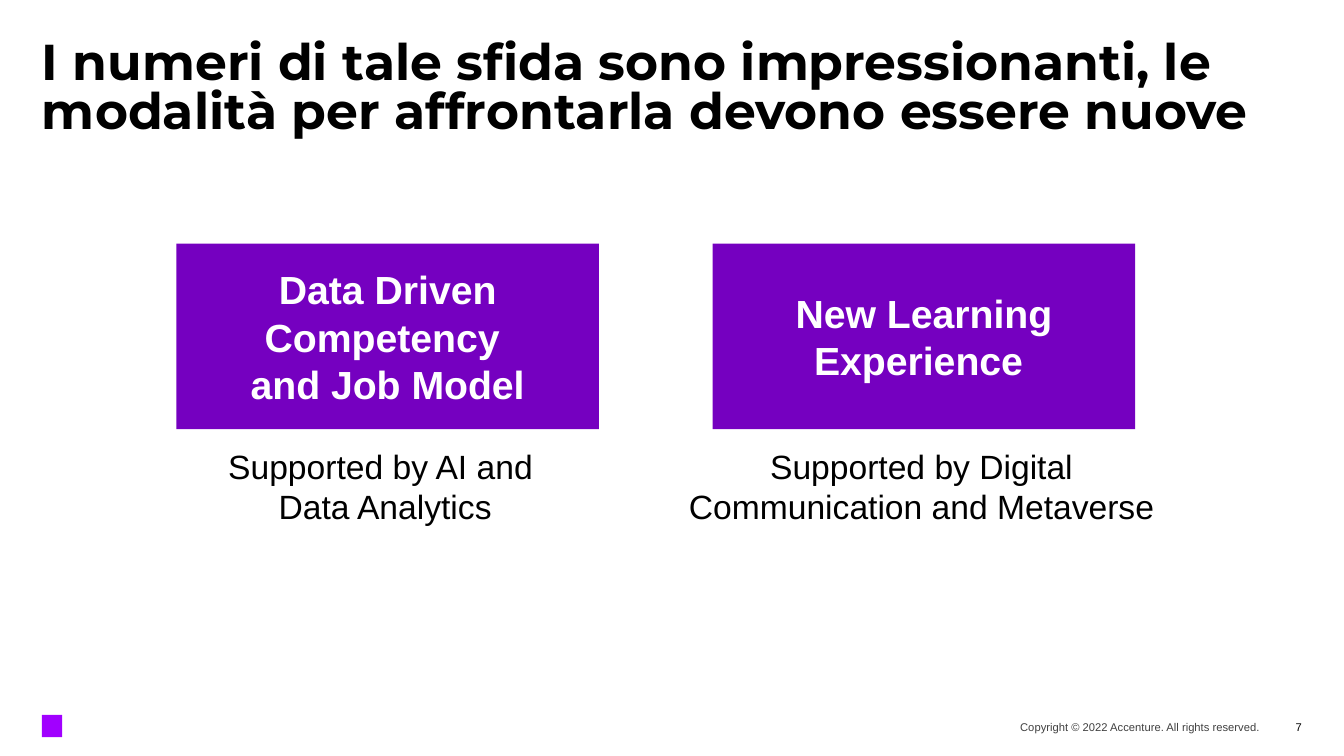
from pptx import Presentation
from pptx import util as u
from pptx.dml.color import RGBColor
from pptx.enum import shapes, text

BLACK = RGBColor(0x00, 0x00, 0x00)
GREY = RGBColor(0x40, 0x40, 0x40)
WHITE = RGBColor(0xFF, 0xFF, 0xFF)
PURPLE = RGBColor(0x75, 0x00, 0xC0)
VIOLET = RGBColor(0xA1, 0x00, 0xFF)

COLUMNS, ROWS = 32, 18
CARD_LEFT, CARD_STEP, CARD_WIDTH = 4.2, 12.77, 10.06
CAPTION_NUDGE = -0.06

TITLE = ("I numeri di tale sfida sono impressionanti, "
         "le modalità per affrontarla devono essere nuove")
# Heading, caption and caption width in columns; \v is a line break
PILLARS = [
    ("Data Driven Competency \vand Job Model",
     "Supported by AI and \vData Analytics", 9.94),
    ("New Learning Experience ",
     "Supported by Digital Communication and Metaverse", 12.02),
]


def write(shape, words, size=24, font="Arial", color=BLACK, bold=False,
          align=text.PP_ALIGN.CENTER, anchor=text.MSO_ANCHOR.TOP,
          inset=(0, 0), wrap=True, spacing=None):
    """Fill a shape with one paragraph; inset is (horizontal, vertical) in inches."""
    frame = shape.text_frame
    frame.word_wrap = wrap
    frame.auto_size = text.MSO_AUTO_SIZE.NONE
    frame.vertical_anchor = anchor
    frame.margin_left = frame.margin_right = u.Inches(inset[0])
    frame.margin_top = frame.margin_bottom = u.Inches(inset[1])
    para = frame.paragraphs[0]
    para.text = words
    para.alignment = align
    if spacing:
        para.line_spacing = spacing
    for span in para.runs:
        span.font.size = u.Pt(size)
        span.font.name = font
        span.font.bold = bold
        span.font.color.rgb = color


class SlideBuilder:
    def __init__(self, deck):
        self.cell_width = deck.slide_width / COLUMNS
        self.cell_height = deck.slide_height / ROWS
        self.page = deck.slides.add_slide(deck.slide_layouts[5])

    def place(self, column, row, columns, rows):
        """Turn grid units into left, top, width and height."""
        return (round(column * self.cell_width), round(row * self.cell_height),
                round(columns * self.cell_width), round(rows * self.cell_height))

    def title(self, words, *cells):
        box = self.page.shapes.title
        box.left, box.top, box.width, box.height = self.place(*cells)
        write(box, words, size=36, font="Montserrat", bold=True,
              align=text.PP_ALIGN.LEFT, spacing=0.8)

    def block(self, color, *cells):
        box = self.page.shapes.add_shape(
            shapes.MSO_SHAPE.RECTANGLE, *self.place(*cells))
        box.shadow.inherit = False
        box.fill.solid()
        box.fill.fore_color.rgb = color
        box.line.fill.background()
        return box

    def card(self, words, *cells):
        write(self.block(PURPLE, *cells), words, size=28, color=WHITE, bold=True,
              anchor=text.MSO_ANCHOR.MIDDLE, inset=(0.1, 0.1))

    def label(self, words, *cells, **style):
        write(self.page.shapes.add_textbox(*self.place(*cells)), words, **style)

    def footer(self, words, *cells, **style):
        self.label(words, *cells, size=8, align=text.PP_ALIGN.RIGHT,
                   anchor=text.MSO_ANCHOR.MIDDLE, **style)


def main():
    deck = Presentation()
    deck.slide_width, deck.slide_height = u.Inches(13.33), u.Inches(7.5)
    slide = SlideBuilder(deck)

    slide.title(TITLE, 1, 1, 30, 2.11)
    for index, (heading, caption, caption_width) in enumerate(PILLARS):
        left = CARD_LEFT + index * CARD_STEP
        slide.card(heading, left, 5.8, CARD_WIDTH, 4.42)
        caption_left = left + (CARD_WIDTH - caption_width) / 2 + CAPTION_NUDGE
        slide.label(caption, caption_left, 10.49, caption_width, 2.18,
                    inset=(0.1, 0.05))

    slide.block(VIOLET, 1, 17.02, 0.48, 0.53)
    slide.footer("Copyright © 2022 Accenture. All rights reserved.",
                 19.2, 17.04, 10.8, 0.53, color=GREY)
    slide.footer("7", 30.14, 17.04, 0.86, 0.53, wrap=False)
    deck.save("out.pptx")


if __name__ == "__main__":
    main()
